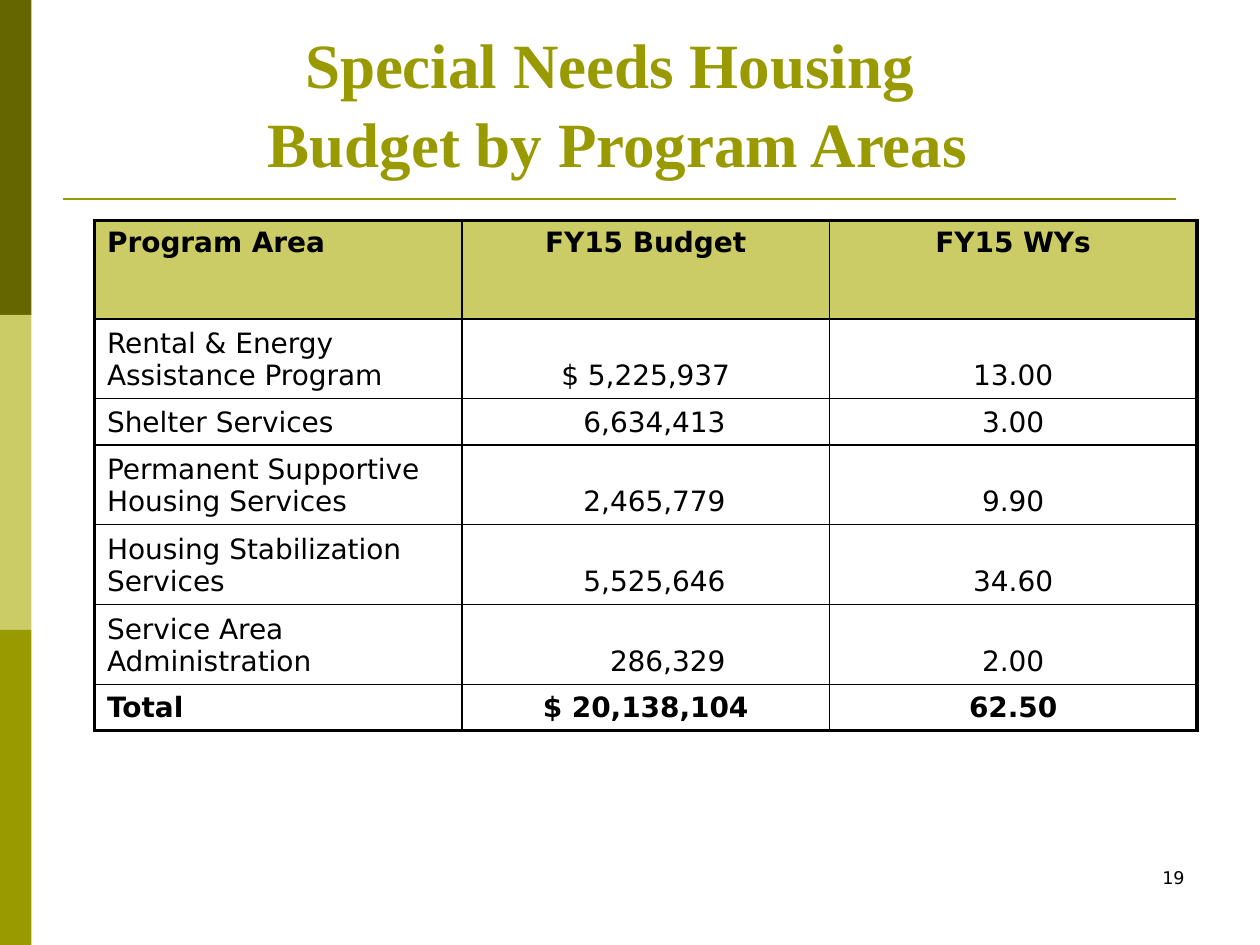
from pptx import Presentation
from pptx.dml.color import RGBColor
from pptx.enum.shapes import MSO_CONNECTOR, MSO_SHAPE
from pptx.enum.text import MSO_ANCHOR as Anchor, PP_ALIGN as Align
from pptx.oxml.ns import qn
from pptx.util import Inches, Pt
from lxml.etree import SubElement

COLORS = {"dark": "666600", "light": "CCCC66", "olive": "999900", "black": "000000"}
BODY, SERIF = "DejaVu Sans", "Times New Roman"
WIDTH, HEIGHT = 10, 7.5

TITLE = "Special Needs Housing \vBudget by Program Areas"
PAGE_NUMBER = "19"
HEADER = ("Program Area", "FY15 Budget", "FY15 WYs")
# Program area, budget, work years, indent that lines up the budget digits
PROGRAMS = [
    ("Rental & Energy Assistance Program", "$ 5,225,937", "13.00", 0),
    ("Shelter Services", "6,634,413", "3.00", 0.14),
    ("Permanent Supportive Housing Services", "2,465,779", "9.90", 0.14),
    ("Housing Stabilization Services", "5,525,646", "34.60", 0.14),
    ("Service Area Administration", "286,329", "2.00", 0.35),
]
TOTAL = ("Total", "$ 20,138,104", "62.50")
ROWS = [HEADER, *(program[:3] for program in PROGRAMS), TOTAL]
INDENTS = [0, *(program[3] for program in PROGRAMS), 0]
HEADER_HEIGHT, ONE_LINE, TWO_LINES = 0.78, 0.36, 0.61
ROW_HEIGHTS = [HEADER_HEIGHT, TWO_LINES, ONE_LINE, TWO_LINES, TWO_LINES, TWO_LINES, ONE_LINE]
TABLE_LEFT, TABLE_TOP, TABLE_WIDTH = 0.75, 1.75, 8.75
CELL_MARGIN = 0.1
THIN, THICK = 1, 2.25


def color(name):
    return RGBColor.from_string(COLORS[name])


def write(frame, text, *, font=BODY, size=16, bold=False, ink="black",
          align=Align.LEFT, spacing=None):
    frame.word_wrap = True
    para = frame.paragraphs[0]
    para.text = text
    para.alignment = align
    para.line_spacing = spacing
    for span in para.runs:
        span.font.name, span.font.size, span.font.bold = font, Pt(size), bold
        span.font.color.rgb = color(ink)


def add_text(page, area, text, *, anchor=Anchor.TOP, **style):
    box = page.shapes.add_textbox(*map(Inches, area))
    box.text_frame.vertical_anchor = anchor
    write(box.text_frame, text, **style)


def add_side_bands(page):
    band_height = HEIGHT / 3
    for index, name in enumerate(("dark", "light", "olive")):
        band = page.shapes.add_shape(
            MSO_SHAPE.RECTANGLE, 0, Inches(index * band_height),
            Inches(WIDTH / 40), Inches(band_height))
        band.shadow.inherit = False
        band.fill.solid()
        band.fill.fore_color.rgb = color(name)
        band.line.fill.background()


def add_title_rule(page):
    rule = page.shapes.add_connector(
        MSO_CONNECTOR.STRAIGHT, *map(Inches, (0.5, 1.58, 9.33, 1.58)))
    rule.line.color.rgb = color("olive")
    rule.line.width = Pt(1.5)
    SubElement(rule._element.spPr, qn("a:effectLst"))


def set_borders(cell, widths):
    """Draw black borders; widths are points for left, right, top, bottom."""
    properties = cell._tc.get_or_add_tcPr()
    for index, (side, width) in enumerate(zip("LRTB", widths)):
        line = properties.makeelement(qn(f"a:ln{side}"), {"w": str(Pt(width))})
        fill = SubElement(line, qn("a:solidFill"))
        SubElement(fill, qn("a:srgbClr"), val=COLORS["black"])
        properties.insert(index, line)


def add_budget_table(page):
    last_row, last_column = len(ROWS) - 1, len(HEADER) - 1
    table = page.shapes.add_table(
        len(ROWS), len(HEADER), Inches(TABLE_LEFT), Inches(TABLE_TOP),
        Inches(TABLE_WIDTH), Inches(sum(ROW_HEIGHTS))).table
    for column in table.columns:
        column.width = Inches(TABLE_WIDTH / len(HEADER))
    for r, (texts, height) in enumerate(zip(ROWS, ROW_HEIGHTS)):
        table.rows[r].height = Inches(height)
        for c, text in enumerate(texts):
            cell = table.cell(r, c)
            cell.vertical_anchor = Anchor.BOTTOM if r else Anchor.TOP
            cell.margin_left = Inches(CELL_MARGIN + (INDENTS[r] if c == 1 else 0))
            if r == 0:
                cell.fill.solid()
                cell.fill.fore_color.rgb = color("light")
            else:
                cell.fill.background()
            write(cell.text_frame, text, bold=r in (0, last_row),
                  align=Align.CENTER if c else Align.LEFT)
            outer = (c == 0, c == last_column, r == 0, r == last_row)
            set_borders(cell, [THICK if edge else THIN for edge in outer])


def main():
    deck = Presentation()
    deck.slide_width, deck.slide_height = Inches(WIDTH), Inches(HEIGHT)
    page = deck.slides.add_slide(deck.slide_layouts[6])
    add_side_bands(page)
    add_title_rule(page)
    add_text(page, (7.17, 6.83, 2.33, 0.5), PAGE_NUMBER, size=10, align=Align.RIGHT)
    add_text(page, (0.99, 0.25, 7.82, 1.23), TITLE, font=SERIF, size=36, bold=True,
             ink="olive", align=Align.CENTER, anchor=Anchor.BOTTOM, spacing=1.05)
    add_budget_table(page)
    deck.save("out.pptx")


if __name__ == "__main__":
    main()
